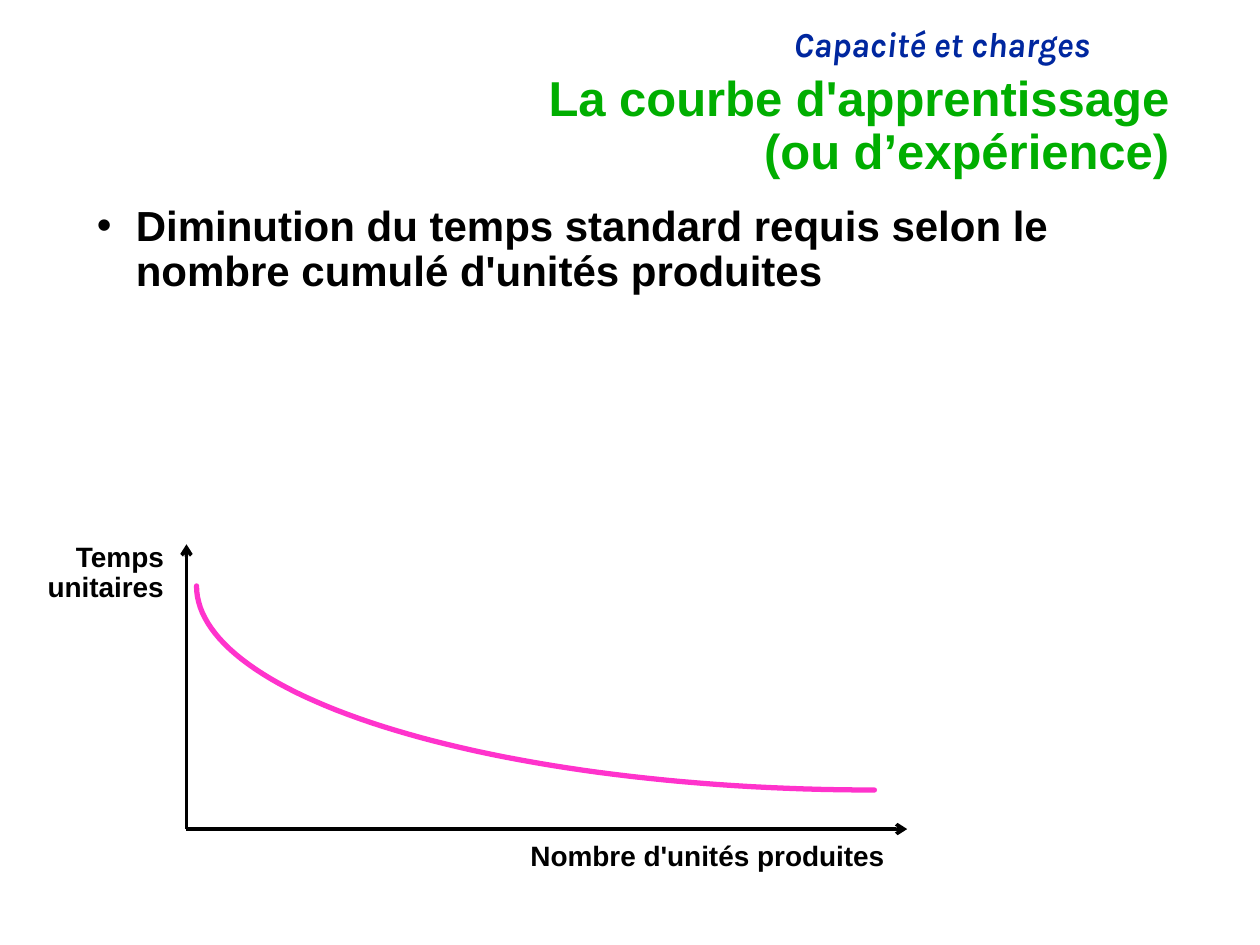
from math import cos, pi, sin

from lxml import etree
from pptx import Presentation
from pptx import util as u
from pptx.dml.color import RGBColor
from pptx.enum import shapes, text
from pptx.oxml import ns

BLACK = RGBColor(0, 0, 0)
GREEN = RGBColor(0x00, 0xAE, 0x00)
BLUE = RGBColor(0x00, 0x27, 0x9F)
PINK = RGBColor(0xFF, 0x33, 0xCC)
LEFT, MID, RIGHT = text.PP_ALIGN.LEFT, text.PP_ALIGN.CENTER, text.PP_ALIGN.RIGHT


def add_node(parent, tag, **attrs):
    return etree.SubElement(parent, ns.qn(tag), attrs)


class Painter:
    font = {"name": "Arial", "bold": True}

    def __init__(self, slide):
        self.slide = slide

    def set_text(self, frame, words, size, color=BLACK, align=LEFT, **font):
        frame.text = words
        look = {**self.font, "size": u.Pt(size), **font}
        for para in frame.paragraphs:
            para.alignment = align
            para.line_spacing = 0.9
            for run in para.runs:
                for key, value in look.items():
                    setattr(run.font, key, value)
                run.font.color.rgb = color

    def set_line(self, shape, color, width):
        """Format the outline and return its XML element."""
        shape.line.color.rgb = color
        shape.line.width = u.Pt(width)
        return shape._element.spPr.find(ns.qn("a:ln"))

    def title(self, words, box):
        shape = self.slide.shapes.title
        for key, value in zip(("left", "top", "width", "height"), box):
            setattr(shape, key, u.Inches(value))
        frame = shape.text_frame
        frame.auto_size = text.MSO_AUTO_SIZE.NONE
        frame.vertical_anchor = text.MSO_ANCHOR.MIDDLE
        self.set_text(frame, words, 28, GREEN, RIGHT)

    def label(self, words, box, size, wrap=True, **style):
        frame = self.slide.shapes.add_textbox(*map(u.Inches, box)).text_frame
        frame.word_wrap = wrap
        self.set_text(frame, words, size, **style)
        return frame

    def bullet(self, words, box):
        frame = self.label(words, box, 24)
        for para in frame.paragraphs:
            props = para._p.get_or_add_pPr()
            props.set("marL", str(u.Inches(0.31)))
            props.set("indent", str(u.Inches(-0.31)))
            add_node(props, "a:buFont", typeface="Arial")
            add_node(props, "a:buChar", char="•")

    def arrow(self, start, end):
        line = self.slide.shapes.add_connector(
            shapes.MSO_CONNECTOR.STRAIGHT, *map(u.Inches, start + end))
        add_node(self.set_line(line, BLACK, 2), "a:tailEnd", type="arrow")
        add_node(line._element.spPr, "a:effectLst")

    def curve(self, left, top, width, height, steps=60):
        """Draw the lower left quarter of an ellipse."""
        angles = [pi / 2 * i / steps for i in range(steps + 1)]
        points = [(u.Inches(left + width * (1 - cos(a))),
                   u.Inches(top + height * sin(a))) for a in angles]
        pen = self.slide.shapes.build_freeform(*points[0])
        pen.add_line_segments(points[1:], close=False)
        shape = pen.convert_to_shape()
        shape.shadow.inherit = False
        shape.fill.background()
        edge = self.set_line(shape, PINK, 3)
        edge.set("cap", "rnd")
        add_node(edge, "a:round")


def main():
    deck = Presentation()
    deck.slide_width, deck.slide_height = u.Inches(10), u.Inches(7.5)
    art = Painter(deck.slides.add_slide(deck.slide_layouts[5]))

    art.label("Capacité et charges", (1.17, 0.17, 7.58, 0.4), 20,
              color=BLUE, align=RIGHT, name="Karla", italic=True)
    art.title("La courbe d'apprentissage\v(ou d’expérience)",
              (1.46, 0.76, 7.92, 0.5))
    art.bullet("Diminution du temps standard requis selon le nombre cumulé "
               "d'unités produites", (0.67, 1.58, 8.83, 2.49))

    base = (1.48, 6.58)
    art.curve(1.56, 4.65, 5.38, 1.62)
    art.arrow(base, (1.48, 4.32))
    art.arrow(base, (7.2, 6.58))
    art.label("Temps\nunitaires", (0.26, 4.26, 1.14, 0.58), 16,
              wrap=False, align=RIGHT)
    art.label("Nombre d'unités produites", (4.09, 6.64, 3.05, 0.34), 16,
              wrap=False, align=MID)

    deck.save("out.pptx")


if __name__ == "__main__":
    main()
